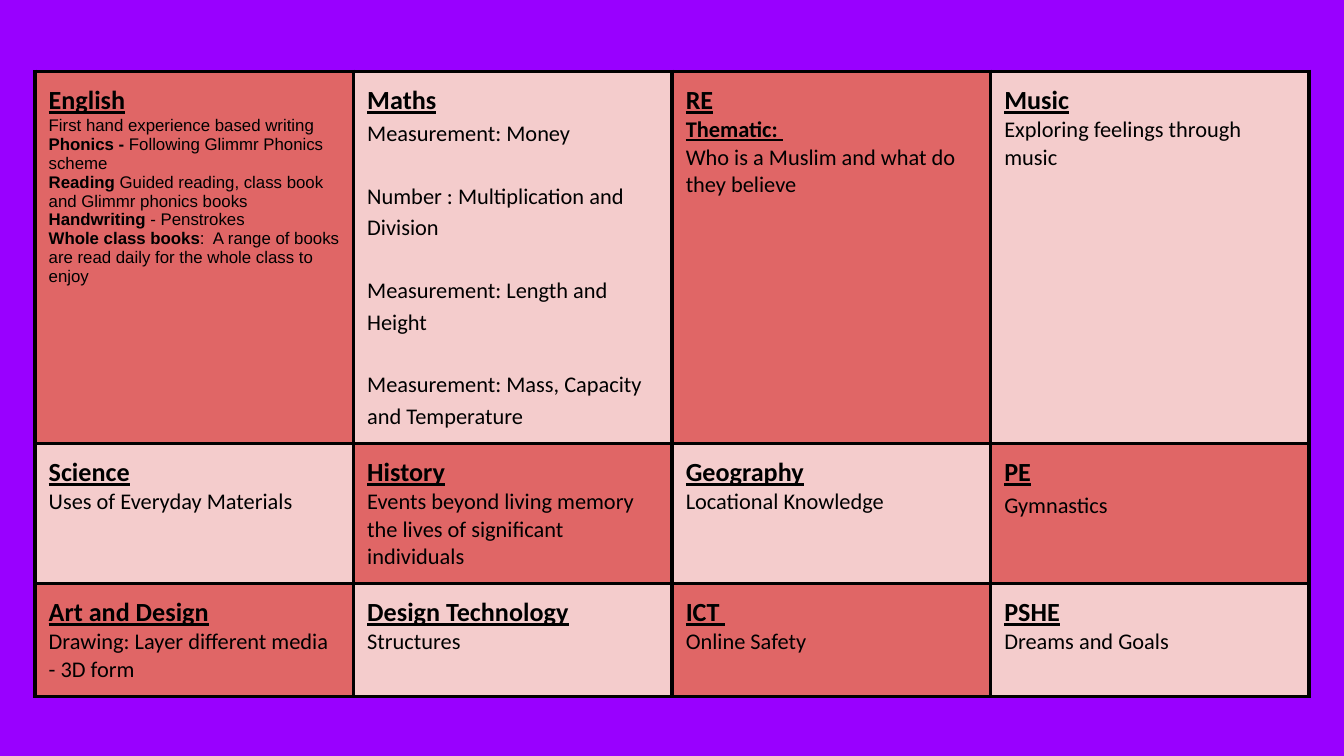
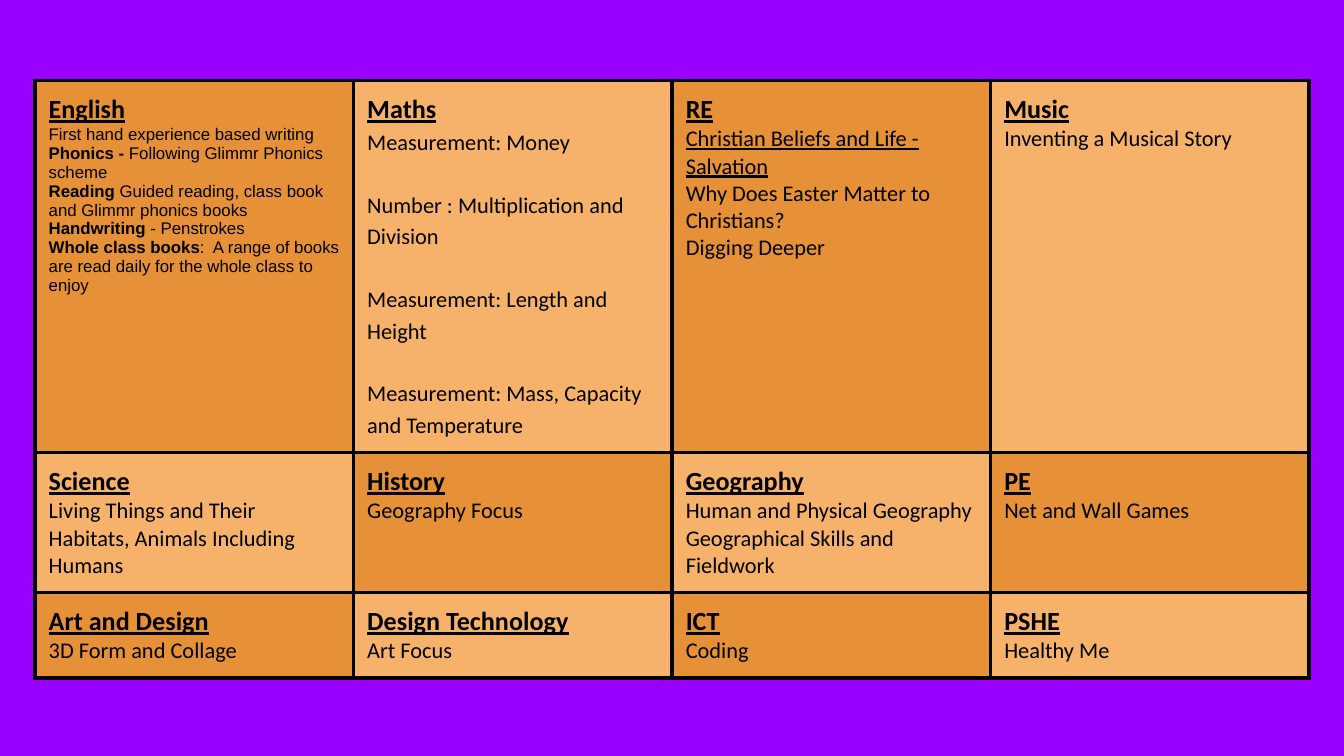
from dataclasses import dataclass
from lxml.etree import SubElement as Sub
from pptx import Presentation as Deck
from pptx.dml.color import RGBColor as Rgb
from pptx.oxml.ns import qn
from pptx.util import Cm, Pt

# Content: a line is plain text, or (spacing, run, run, ...) with (style, text) runs
ENGLISH = ("English", [
    ("tight", ("small", "First hand experience based writing "), ("strong", "Phonics -"),
     ("small", " Following Glimmr Phonics scheme")),
    ("tight", ("strong", "Reading "),
     ("small", "Guided reading, class book and Glimmr phonics books")),
    ("tight", ("strong", "Handwriting"), ("small", " - Penstrokes")),
    ("tight", ("strong", "Whole class books"),
     ("small", ":  A range of books are read daily for the whole class to enjoy")),
])
MATHS = ("Maths", [
    ("loose", ("body", "Measurement: Money")),
    ("apart", ("body", "Number : Multiplication and Division")),
    ("apart", ("body", "Measurement: Length and Height")),
    ("apart", ("body", "Measurement: Mass, Capacity and Temperature")),
])
TERMS = [
    {
        "top": 1.35, "rows": (3.84, 2.11, 2.11), "fills": ("E06666", "F4CCCC"),
        "cells": [
            [ENGLISH, MATHS,
             ("RE", [("tight", ("theme", "Thematic: ")),
                     "Who is a Muslim and what do they believe"]),
             ("Music", ["Exploring feelings through music"])],
            [("Science", ["Uses of Everyday Materials"]),
             ("History", ["Events beyond living memory",
                          "the lives of significant individuals"]),
             ("Geography", ["Locational Knowledge"]),
             ("PE", [("loose", ("body", "Gymnastics"))])],
            [("Art and Design", ["Drawing: Layer different media - 3D form"]),
             ("Design Technology", ["Structures"]),
             ("ICT ", ["Online Safety"]),
             ("PSHE", ["Dreams and Goals"])],
        ],
    },
    {
        "top": 1.52, "rows": (3.51, 2.46, 1.57), "fills": ("E69138", "F6B26B"),
        "cells": [
            [ENGLISH, MATHS,
             ("RE", [("tight", ("under", "Christian Beliefs and Life - Salvation")),
                     "Why Does Easter Matter to Christians?",
                     "Digging Deeper"]),
             ("Music", ["Inventing a Musical Story"])],
            [("Science", ["Living Things and Their Habitats, Animals Including Humans"]),
             ("History", ["Geography Focus"]),
             ("Geography", ["Human and Physical Geography",
                            "Geographical Skills and Fieldwork"]),
             ("PE", ["Net and Wall Games"])],
            [("Art and Design", ["3D Form and Collage"]),
             ("Design Technology", ["Art Focus"]),
             ("ICT", ["Coding"]),
             ("PSHE", ["Healthy Me"])],
        ],
    },
]


@dataclass(frozen=True)
class Theme:
    back: str = "9900FF"
    ink: str = "000000"
    line: float = 2.25
    wide: float = 25.4
    high: float = 14.29
    left: float = 0.66
    col: float = 6.02
    side: float = 0.26
    pad: float = 0.25


THEME = Theme()
# Font, size, bold, underline
STYLES = {
    "title": ("Calibri", 14, True, True),
    "theme": ("Calibri", 12, True, True),
    "under": ("Calibri", 12, False, True),
    "body": ("Calibri", 12, False, False),
    "small": ("Arial", 9, False, False),
    "strong": ("Arial", 9, True, False),
}
# Line spacing, points before
SPACING = {"tight": (1.0, 0), "loose": (1.15, 0), "apart": (1.15, 16.8)}


def add_run(para, style, text):
    run = para.add_run()
    run.text = text
    font = run.font
    font.name, size, font.bold, font.underline = STYLES[style]
    font.size = Pt(size)
    font.color.rgb = Rgb.from_string(THEME.ink)


def add_edges(cell):
    props = cell._tc.get_or_add_tcPr()
    for side in "LRTB":
        edge = Sub(props, qn("a:ln" + side), w=str(Pt(THEME.line)))
        Sub(Sub(edge, qn("a:solidFill")), qn("a:srgbClr"), val=THEME.ink)


def fill_cell(cell, title, lines, color):
    # Edges come before the fill in the cell properties
    add_edges(cell)
    cell.fill.solid()
    cell.fill.fore_color.rgb = Rgb.from_string(color)
    cell.margin_left = cell.margin_right = Cm(THEME.side)
    cell.margin_top = cell.margin_bottom = Cm(THEME.pad)

    # Heading, then the lines below it
    frame = cell.text_frame
    add_run(frame.paragraphs[0], "title", title)
    for line in lines:
        if isinstance(line, str):
            line = ("tight", ("body", line))
        gap, *runs = line
        para = frame.add_paragraph()
        para.line_spacing, before = SPACING[gap]
        para.space_before = Pt(before)
        for style, text in runs:
            add_run(para, style, text)


def add_term(deck, term):
    # Plain coloured slide
    slide = deck.slides.add_slide(deck.slide_layouts[6])
    back = slide.background.fill
    back.solid()
    back.fore_color.rgb = Rgb.from_string(THEME.back)

    # Subject grid
    cells, rows = term["cells"], term["rows"]
    count = len(cells[0])
    grid = slide.shapes.add_table(
        len(rows), count, Cm(THEME.left), Cm(term["top"]),
        Cm(THEME.col * count), Cm(sum(rows))).table
    grid.first_row = grid.horz_banding = False
    for col in grid.columns:
        col.width = Cm(THEME.col)
    for r, high in enumerate(rows):
        grid.rows[r].height = Cm(high)
        for c, (title, lines) in enumerate(cells[r]):
            # Two fills in a chequered pattern
            fill_cell(grid.cell(r, c), title, lines, term["fills"][(r + c) % 2])


def main():
    deck = Deck()
    deck.slide_width, deck.slide_height = Cm(THEME.wide), Cm(THEME.high)
    for term in TERMS:
        add_term(deck, term)
    deck.save("out.pptx")


if __name__ == "__main__":
    main()
